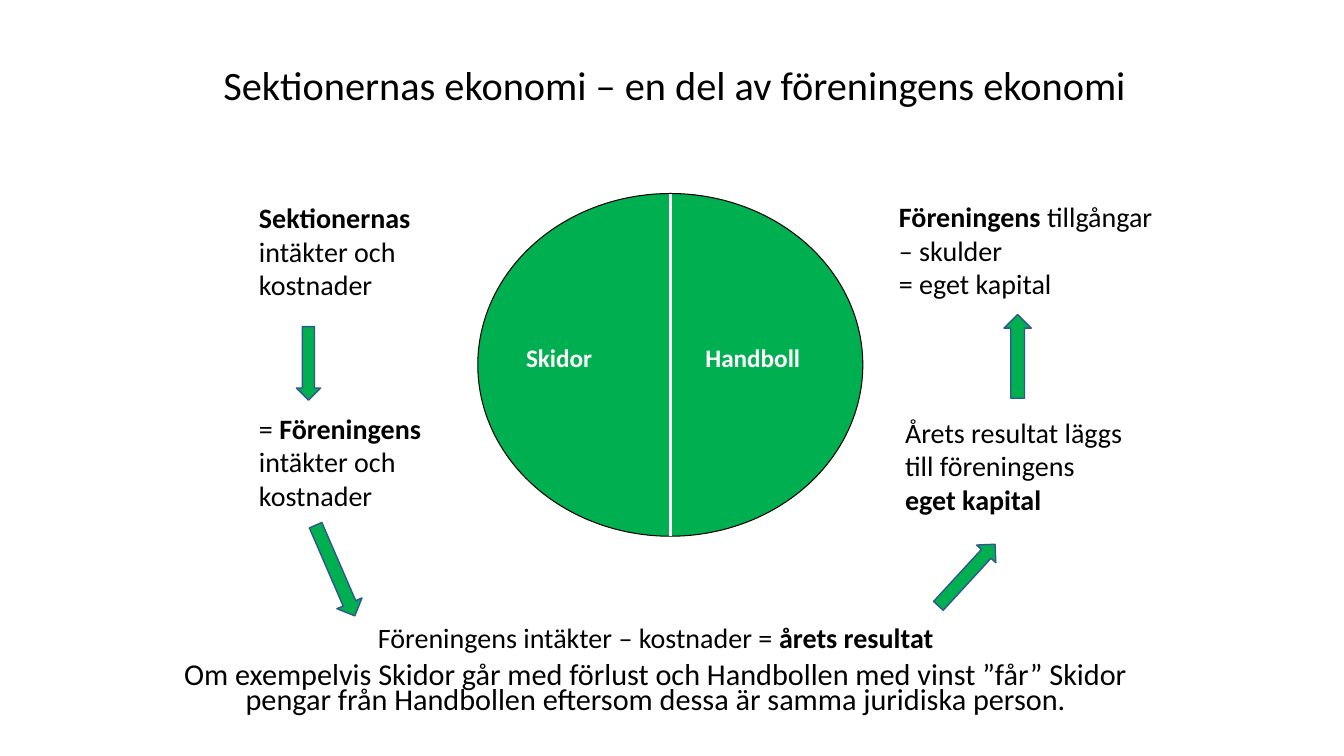
from dataclasses import dataclass

from lxml import etree
from pptx import Presentation
from pptx.dml.color import RGBColor
from pptx.enum.shapes import MSO_CONNECTOR, MSO_SHAPE
from pptx.enum.text import MSO_ANCHOR, PP_ALIGN
from pptx.oxml.ns import qn
from pptx.slide import Slide
from pptx.util import Inches, Pt

STRAIGHT = MSO_CONNECTOR.STRAIGHT
ELLIPSE = MSO_SHAPE.OVAL
DOWN_ARROW = MSO_SHAPE.DOWN_ARROW
TOP, MIDDLE = MSO_ANCHOR.TOP, MSO_ANCHOR.MIDDLE
LEFT, CENTER = PP_ALIGN.LEFT, PP_ALIGN.CENTER

SLIDE_WIDTH = Inches(13.33)
SLIDE_HEIGHT = Inches(7.5)
FONT = "Calibri"
COLORS = {
    "text": "000000",
    "green": "00B050",
    "white": "FFFFFF",
    "arrow_line": "325491",
}


@dataclass(frozen=True)
class Box:
    """Position and size in percent of the slide's width and height."""

    left: float
    top: float
    width: float
    height: float

    def emu(self) -> tuple[int, int, int, int]:
        return across(self.left), down(self.top), across(self.width), down(self.height)


@dataclass(frozen=True)
class Part:
    text: str
    bold: bool = False


@dataclass(frozen=True)
class Label:
    box: Box
    paragraphs: tuple[tuple[Part, ...], ...]
    size: float = 20
    color: str = "text"
    align: PP_ALIGN = LEFT
    anchor: MSO_ANCHOR = TOP
    line_spacing: float = 1.0


@dataclass(frozen=True)
class Figure:
    box: Box
    preset: MSO_SHAPE = DOWN_ARROW
    rotation: float = 0
    line_color: str = "arrow_line"
    line_width: float = 1


CIRCLE = Figure(Box(35.55, 25.6, 28.65, 45.33), ELLIPSE, line_color="text", line_width=0.75)
DIVIDER_LEFT = 49.88

ARROWS = (
    Figure(Box(22.05, 43.2, 1.8, 9.73)),
    Figure(Box(23.93, 68.93, 2.03, 13.07), rotation=336.6),
    Figure(Box(70.95, 70.53, 1.95, 11.07), rotation=222.6),
    Figure(Box(74.7, 41.6, 2.03, 11.07), rotation=180),
)

LABELS = (
    Label(
        Box(12.52, 7.2, 75.38, 8.8),
        ((Part("Sektionernas ekonomi – en del av föreningens ekonomi"),),),
        size=28.8, align=CENTER, anchor=MIDDLE, line_spacing=0.9,
    ),
    Label(Box(38.4, 44.67, 12.38, 5.33), ((Part("Skidor", True),),), size=18, color="white"),
    Label(Box(51.75, 44.67, 13.35, 5.33), ((Part("Handboll", True),),), size=18, color="white"),
    Label(
        Box(18.53, 25.87, 17.7, 14.8),
        ((Part("Sektionernas ", True), Part("intäkter och kostnader")),),
    ),
    Label(
        Box(18.53, 53.73, 14.93, 14.8),
        ((Part("= "), Part("Föreningens ", True), Part("intäkter och kostnader")),),
    ),
    Label(
        Box(27.38, 81.47, 44.25, 5.87),
        ((Part("Föreningens intäkter – kostnader = "), Part("årets resultat", True)),),
    ),
    Label(
        Box(66.6, 54.27, 20.7, 14.8),
        (
            (Part("Årets resultat läggs"),),
            (Part("till föreningens"),),
            (Part("eget kapital", True),),
        ),
    ),
    Label(
        Box(66.15, 25.73, 21.68, 14.8),
        (
            (Part("Föreningens", True), Part(" tillgångar – skulder")),
            (Part("= eget kapital"),),
        ),
    ),
    Label(
        Box(11.1, 86.93, 75.38, 8.8),
        ((Part(
            "Om exempelvis Skidor går med förlust och Handbollen med vinst ”får” Skidor "
            "pengar från Handbollen eftersom dessa är samma juridiska person."
        ),),),
        size=21.6, align=CENTER, anchor=MIDDLE, line_spacing=0.7,
    ),
)


def across(percent: float) -> int:
    return round(SLIDE_WIDTH * percent / 100)


def down(percent: float) -> int:
    return round(SLIDE_HEIGHT * percent / 100)


def color(name: str) -> RGBColor:
    return RGBColor.from_string(COLORS[name])


def draw_figure(slide: Slide, figure: Figure) -> None:
    shape = slide.shapes.add_shape(figure.preset, *figure.box.emu())
    shape.rotation = figure.rotation
    shape.shadow.inherit = False
    shape.fill.solid()
    shape.fill.fore_color.rgb = color("green")
    shape.line.color.rgb = color(figure.line_color)
    shape.line.width = Pt(figure.line_width)


def draw_divider(slide: Slide) -> None:
    left = across(DIVIDER_LEFT)
    top = down(CIRCLE.box.top)
    bottom = down(CIRCLE.box.top + CIRCLE.box.height)
    divider = slide.shapes.add_connector(STRAIGHT, left, bottom, left, top)
    divider.line.color.rgb = color("white")
    divider.line.width = Pt(2.25)
    etree.SubElement(divider._element.spPr, qn("a:effectLst"))


def draw_label(slide: Slide, label: Label) -> None:
    text_frame = slide.shapes.add_textbox(*label.box.emu()).text_frame
    text_frame.word_wrap = True
    text_frame.vertical_anchor = label.anchor
    text_frame.text = "\n".join(parts[0].text for parts in label.paragraphs)
    for paragraph, parts in zip(text_frame.paragraphs, label.paragraphs):
        paragraph.alignment = label.align
        paragraph.line_spacing = label.line_spacing
        for part in parts[1:]:
            paragraph.add_run().text = part.text
        for run, part in zip(paragraph.runs, parts):
            run.font.name = FONT
            run.font.size = Pt(label.size)
            run.font.bold = part.bold
            run.font.color.rgb = color(label.color)


def main() -> None:
    presentation = Presentation()
    presentation.slide_width = SLIDE_WIDTH
    presentation.slide_height = SLIDE_HEIGHT
    slide = presentation.slides.add_slide(presentation.slide_layouts[6])
    draw_figure(slide, CIRCLE)
    draw_divider(slide)
    for arrow in ARROWS:
        draw_figure(slide, arrow)
    for label in LABELS:
        draw_label(slide, label)
    presentation.save("out.pptx")


if __name__ == "__main__":
    main()
